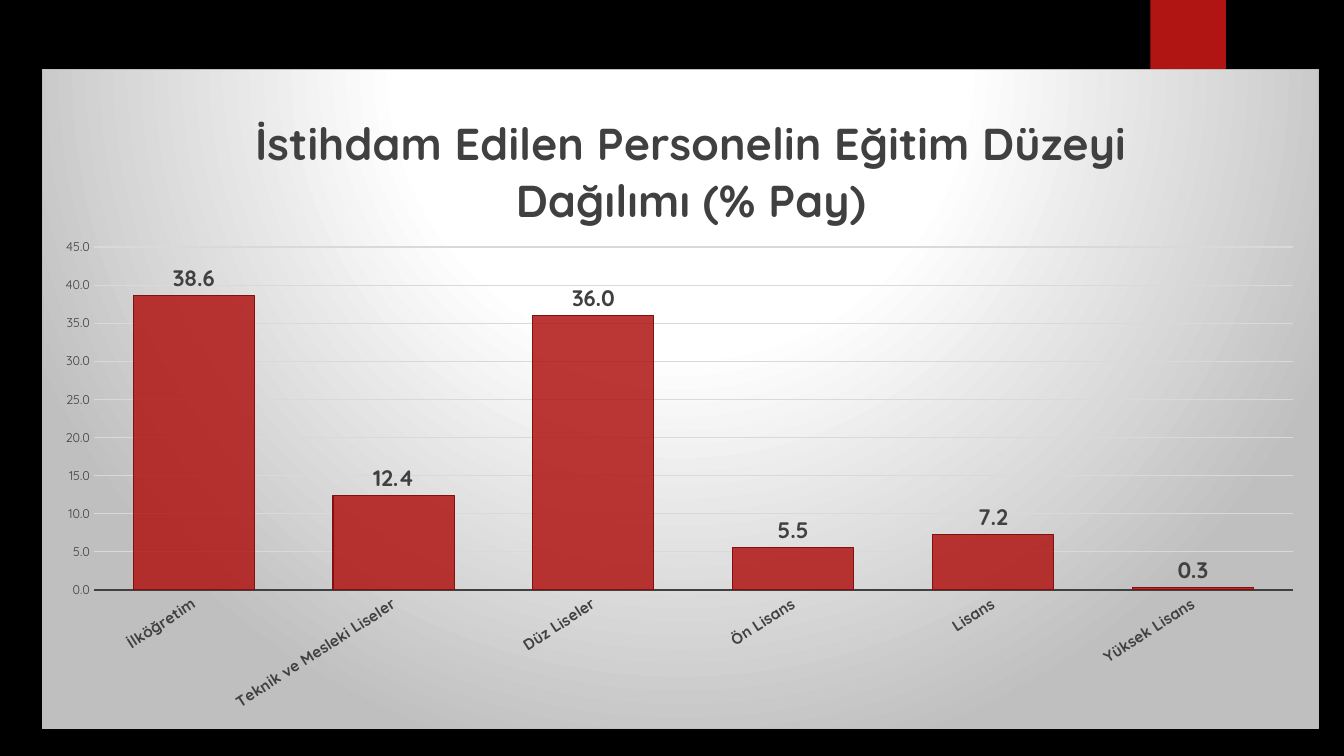
from dataclasses import dataclass

from lxml import etree
from pptx import Presentation
from pptx.chart.data import CategoryChartData
from pptx.dml.color import RGBColor
from pptx.enum.chart import XL_CHART_TYPE, XL_LABEL_POSITION, XL_TICK_MARK
from pptx.enum.shapes import MSO_SHAPE
from pptx.oxml import parse_xml
from pptx.oxml.ns import qn
from pptx.util import Inches, Pt

COLUMN = XL_CHART_TYPE.COLUMN_CLUSTERED
ABOVE = XL_LABEL_POSITION.OUTSIDE_END
NO_TICK = XL_TICK_MARK.NONE
RECT = MSO_SHAPE.RECTANGLE
SPACES = ('xmlns:a="http://schemas.openxmlformats.org/drawingml/2006/main" '
          'xmlns:c="http://schemas.openxmlformats.org/drawingml/2006/chart"')


@dataclass(frozen=True)
class Theme:
    font: str = "Quicksand"
    back: str = "000000"
    red: str = "B01513"
    edge: str = "84100E"
    ink: str = "404040"
    grid: str = "D9D9D9"
    light: str = "FFFFFF"
    shade: str = "BFBFBF"
    title: int = 32
    label: int = 16
    base: int = 10
    cats: int = 11
    scale: int = 9


THEME = Theme()
TITLE = "İstihdam Edilen Personelin Eğitim Düzeyi Dağılımı (% Pay)"
SHARES = {
    "İlköğretim": 38.6,
    "Teknik ve Mesleki Liseler": 12.4,
    "Düz Liseler": 36,
    "Ön Lisans": 5.5,
    "Lisans": 7.2,
    "Yüksek Lisans": 0.3,
}


def paint(fill, color):
    fill.solid()
    fill.fore_color.rgb = RGBColor.from_string(color)


def style(font, size, bold=False):
    font.name = THEME.font
    font.size = Pt(size)
    font.bold = bold
    font.color.rgb = RGBColor.from_string(THEME.ink)


def stroke(line, color, width):
    line.color.rgb = RGBColor.from_string(color)
    line.width = Pt(width)


def seek(root, *tags):
    """Follow child tags down from an element."""
    for tag in tags:
        root = root.find(qn(tag))
    return root


def layout(**parts):
    """Return a manual chart layout, in shares of the chart's size."""
    target = '<c:layoutTarget val="inner"/>' if "w" in parts else ""
    modes = "".join(f'<c:{k}Mode val="edge"/>' for k in "xy")
    sizes = "".join(f'<c:{k} val="{v}"/>' for k, v in parts.items())
    return parse_xml(f"<c:layout {SPACES}><c:manualLayout>{target}{modes}{sizes}"
                     "</c:manualLayout></c:layout>")


def clear_layout(part):
    for old in part.findall(qn("c:layout")):
        part.remove(old)


def panel():
    """Return the chart's radial fill and thin border."""
    stops = ((0, THEME.light), (39, THEME.light), (100, THEME.shade))
    marks = "".join(f'<a:gs pos="{p * 1000}"><a:srgbClr val="{c}"/></a:gs>'
                    for p, c in stops)
    return parse_xml(
        f'<c:spPr {SPACES}><a:gradFill><a:gsLst>{marks}</a:gsLst>'
        '<a:path path="circle"><a:fillToRect l="50000" t="-80000" r="50000" '
        'b="180000"/></a:path></a:gradFill><a:ln w="9525"><a:solidFill>'
        f'<a:srgbClr val="{THEME.shade}"/></a:solidFill></a:ln></c:spPr>')


def add_tab(slide, x, y, w, h):
    tab = slide.shapes.add_shape(RECT, x, y, w, h)
    tab.shadow.inherit = False
    paint(tab.fill, THEME.red)
    tab.line.fill.background()


def set_title(chart):
    title = chart.chart_title
    run = title.text_frame.paragraphs[0].add_run()
    run.text = TITLE
    style(run.font, THEME.title, True)
    title.include_in_layout = False
    root = seek(chart.element, "c:chart", "c:title")
    clear_layout(root)
    seek(root, "c:tx").addnext(layout(x=0.16, y=0.05))


def set_axes(chart):
    cats, scale = chart.category_axis, chart.value_axis
    for axis in (cats, scale):
        axis.major_tick_mark = axis.minor_tick_mark = NO_TICK
    style(cats.tick_labels.font, THEME.cats, True)
    slant = seek(chart.element, "c:chart", "c:plotArea", "c:catAx",
                 "c:txPr", "a:bodyPr")
    slant.set("rot", str(-33 * 60000))
    stroke(cats.format.line, THEME.ink, 1.5)
    style(scale.tick_labels.font, THEME.scale)
    scale.tick_labels.number_format = "0.0"
    scale.tick_labels.number_format_is_linked = False
    scale.minimum_scale, scale.maximum_scale, scale.major_unit = 0, 45, 5
    scale.format.line.fill.background()
    stroke(scale.major_gridlines.format.line, THEME.grid, 0.75)


def set_bars(chart):
    plot = chart.plots[0]
    plot.gap_width = 65
    plot.vary_by_categories = False
    bars = plot.series[0]
    paint(bars.format.fill, THEME.red)
    stroke(bars.format.line, THEME.edge, 0.75)
    color = seek(chart.element, "c:chart", "c:plotArea", "c:barChart", "c:ser",
                 "c:spPr", "a:solidFill", "a:srgbClr")
    etree.SubElement(color, qn("a:alpha"), val="85000")
    labels = bars.data_labels
    labels.show_value = True
    labels.position = ABOVE
    labels.number_format = "0.0"
    labels.number_format_is_linked = False
    style(labels.font, THEME.label, True)


def add_shares(slide, x, y, w, h):
    data = CategoryChartData(number_format="0.0")
    data.categories = list(SHARES)
    data.add_series("Series 1", list(SHARES.values()))
    chart = slide.shapes.add_chart(COLUMN, x, y, w, h, data).chart
    chart.has_legend = False
    style(chart.font, THEME.base)
    set_title(chart)
    set_axes(chart)
    set_bars(chart)
    body = seek(chart.element, "c:chart")
    body.addnext(panel())
    area = seek(body, "c:plotArea")
    clear_layout(area)
    area.insert(0, layout(x=0.04, y=0.27, w=0.94, h=0.52))


def main():
    deck = Presentation()
    deck.slide_width, deck.slide_height = Inches(13.33), Inches(7.5)
    slide = deck.slides.add_slide(deck.slide_layouts[6])
    paint(slide.background.fill, THEME.back)
    add_tab(slide, Inches(11.41), 0, Inches(0.75), Inches(1.25))
    add_shares(slide, Inches(0.42), Inches(0.68), Inches(12.66), Inches(6.55))
    deck.save("out.pptx")


if __name__ == "__main__":
    main()
